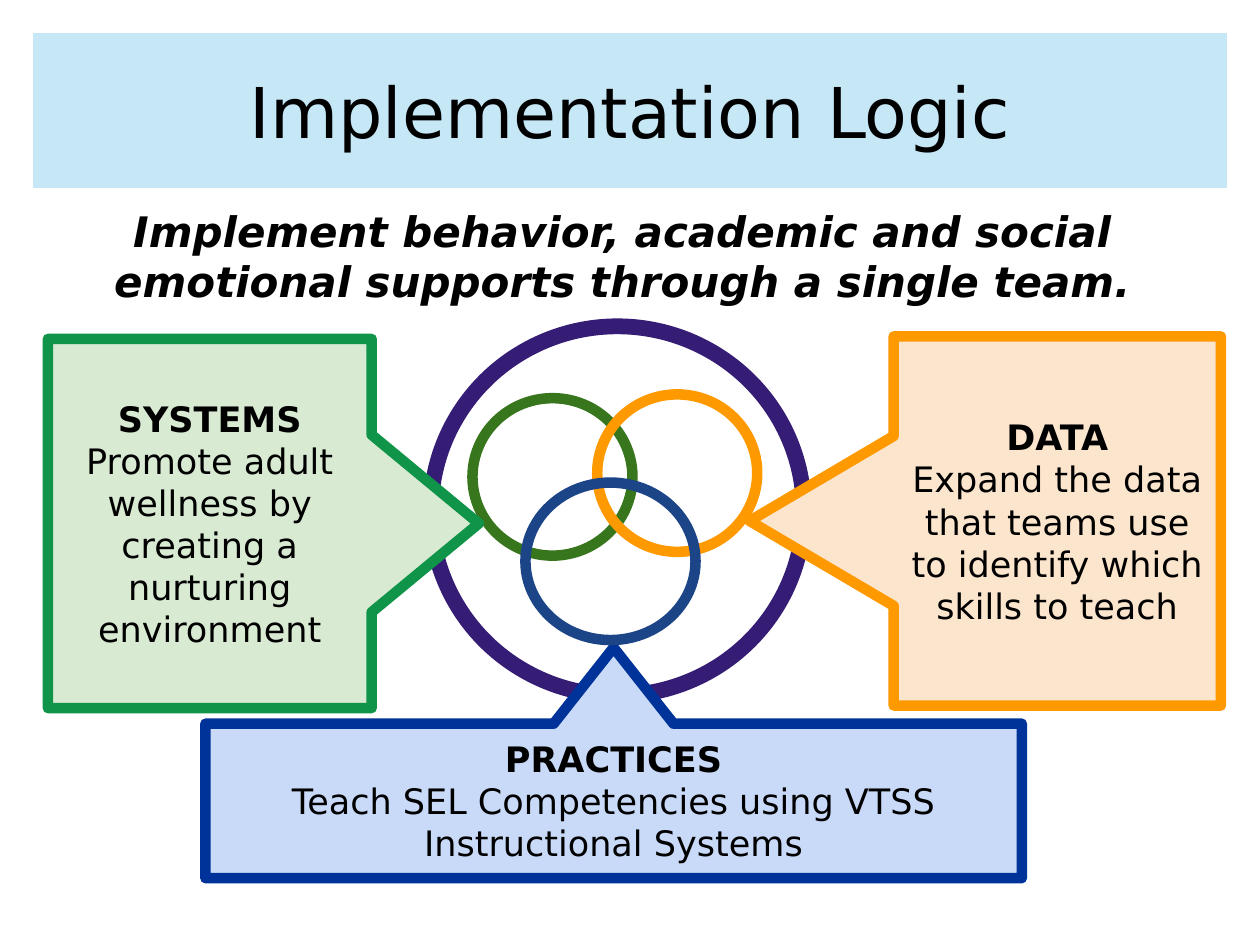
from dataclasses import dataclass

from lxml.etree import SubElement
from pptx import Presentation
from pptx.dml.color import RGBColor
from pptx.enum.shapes import MSO_SHAPE as Shape
from pptx.enum.text import MSO_ANCHOR as Anchor, PP_ALIGN as Align
from pptx.oxml.ns import qn
from pptx.slide import Slide
from pptx.util import Inches, Pt

COLUMNS, ROWS = 100, 75
WIDTH, HEIGHT = Inches(10), Inches(7.5)


def color(value):
    return RGBColor.from_string(value)


def apply(target, values):
    for name, value in values.items():
        setattr(target, name, value)


@dataclass
class Board:
    page: Slide
    font: str = "DejaVu Sans"
    ink: str = "000000"
    heavy: float = 9
    medium: float = 6
    thin: float = 1.5

    def place(self, left, top, width, height):
        column, row = WIDTH / COLUMNS, HEIGHT / ROWS
        return [round(n * unit) for n, unit in
                zip((left, top, width, height), (column, row) * 2)]

    def add_lines(self, box, lines, anchor=Anchor.MIDDLE):
        frame = box.text_frame
        margins = dict.fromkeys(
            ("margin_left", "margin_top", "margin_right", "margin_bottom"), Inches(0.1))
        apply(frame, {"word_wrap": True, "vertical_anchor": anchor, **margins})
        for index, (text, style) in enumerate(lines):
            para = frame.add_paragraph() if index else frame.paragraphs[0]
            para.alignment = Align.CENTER
            span = para.add_run()
            span.text = text
            apply(span.font, {"name": self.font, **style})
            span.font.color.rgb = color(self.ink)

    def shape(self, kind, area, line, weight, fill=None):
        box = self.page.shapes.add_shape(kind, *self.place(*area))
        box.shadow.inherit = False
        if fill:
            box.fill.solid()
            box.fill.fore_color.rgb = color(fill)
        else:
            box.fill.background()
        box.line.color.rgb = color(line)
        box.line.width = Pt(weight)
        SubElement(box.line._ln, qn("a:round"))
        return box

    def title(self, area, text, fill, opacity):
        box = self.shape(Shape.RECTANGLE, area, "FFFFFF", self.thin, fill)
        tint = box._element.spPr.find(qn("a:solidFill"))[0]
        SubElement(tint, qn("a:alpha"), val=str(opacity * 1000))
        self.add_lines(box, [(text, {"size": Pt(40)})])

    def subtitle(self, area, text):
        box = self.page.shapes.add_textbox(*self.place(*area))
        style = {"size": Pt(24), "bold": True, "italic": True}
        self.add_lines(box, [(text, style)], Anchor.TOP)

    def ring(self, area, line, weight=None):
        self.shape(Shape.OVAL, area, line, weight or self.medium)

    def callout(self, kind, area, adjustments, fill, line, heading, text):
        box = self.shape(kind, area, line, self.medium, fill)
        for index, value in enumerate(adjustments):
            box.adjustments[index] = value
        self.add_lines(box, [(heading, {"size": Pt(20), "bold": True}),
                             (text, {"size": Pt(20), "bold": False})])


def main():
    deck = Presentation()
    apply(deck, {"slide_width": WIDTH, "slide_height": HEIGHT})
    board = Board(deck.slides.add_slide(deck.slide_layouts[6]))

    board.title((2.5, 2.5, 95, 12.5), "Implementation Logic", "A9DCF2", 67)
    board.ring((34.2, 25.9, 29.6, 29.3), "351C75", board.heavy)
    board.ring((37.5, 31.6, 12.7, 12.5), "38761D")
    board.subtitle((1.9, 15.3, 95, 4.6),
                   "Implement behavior, academic and social emotional "
                   "supports through a single team.")
    board.callout(Shape.LEFT_ARROW_CALLOUT, (59.5, 26.7, 37.4, 29.3),
                  (0.47, 0.23, 0.39, 0.72), "FCE5CD", "FF9900", "DATA",
                  "Expand the data that teams use to identify which skills to teach")
    board.callout(Shape.UP_ARROW_CALLOUT, (16.3, 51.4, 64.8, 18.3),
                  (0.52, 0.26, 0.33, 0.67), "C9DAF8", "003399", "PRACTICES",
                  "Teach SEL Competencies using VTSS Instructional Systems")
    board.callout(Shape.RIGHT_ARROW_CALLOUT, (3.8, 26.9, 34.2, 29.3),
                  (0.49, 0.24, 0.29, 0.77), "D9EAD3", "109449", "SYSTEMS",
                  "Promote adult wellness by creating a nurturing environment")
    board.ring((47.4, 31.3, 12.7, 12.5), "FF9900")
    board.ring((41.7, 38.3, 13.5, 12.5), "1C4587")

    deck.save("out.pptx")


if __name__ == "__main__":
    main()
